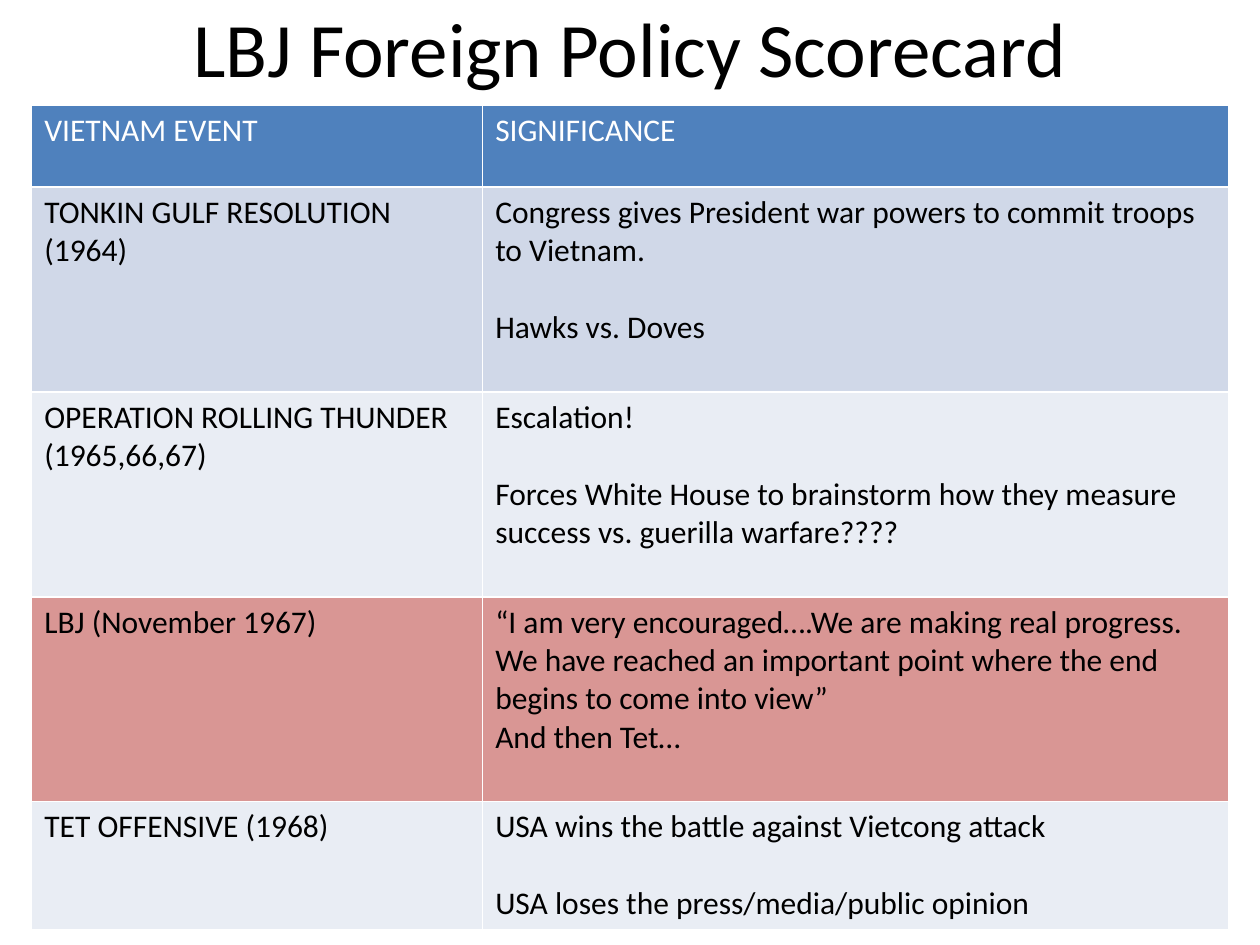
from pptx import Presentation
from pptx.dml.color import RGBColor
from pptx.enum.text import MSO_ANCHOR, PP_ALIGN
from pptx.oxml.ns import qn
from pptx.util import Cm, Pt
from lxml.etree import SubElement

WHITE = RGBColor(0xFF, 0xFF, 0xFF)
BLACK = RGBColor(0, 0, 0)
BLUE = RGBColor(0x4F, 0x81, 0xBD)
MIST = RGBColor(0xD0, 0xD8, 0xE8)
PALE = RGBColor(0xE9, 0xED, 0xF4)
ROSE = RGBColor(0xD9, 0x96, 0x94)
FONT = "Calibri"
GAP = Pt(22)

WIDTHS = (9.09, 15.04)
ROWS = (
    (1.65, BLUE, WHITE, 0, "VIETNAM EVENT", ["SIGNIFICANCE"]),
    (4.13, MIST, BLACK, GAP, "TONKIN GULF RESOLUTION (1964)",
     ["Congress gives President war powers to commit troops to Vietnam.",
      "Hawks vs. Doves"]),
    (4.13, PALE, BLACK, GAP, "OPERATION ROLLING THUNDER (1965,66,67)",
     ["Escalation!",
      "Forces White House to brainstorm how they measure success vs. "
      "guerilla warfare????"]),
    (4.13, ROSE, BLACK, 0, "LBJ (November 1967)",
     ["“I am very encouraged….We are making real progress. We have reached "
      "an important point where the end begins to come into view”",
      "And then Tet…"]),
    (2.58, PALE, BLACK, GAP, "TET OFFENSIVE (1968)",
     ["USA wins the battle against Vietcong attack",
      "USA loses the press/media/public opinion"]),
)


def add_run(para, text, size, ink):
    """Add one styled run to a paragraph."""
    run = para.add_run()
    run.text = text
    font = run.font
    font.name, font.size, font.bold = FONT, Pt(size), False
    font.color.rgb = ink


def add_title(slide, text):
    """Place and fill the title placeholder."""
    title = slide.shapes.title
    title.left, title.top = Cm(1.27), Cm(-0.64)
    title.width, title.height = Cm(22.86), Cm(3.18)
    frame = title.text_frame
    frame.vertical_anchor = MSO_ANCHOR.MIDDLE
    para = frame.paragraphs[0]
    para.alignment = PP_ALIGN.CENTER
    add_run(para, text, 44, BLACK)


def add_rules(cell):
    """Draw thin white rules round a cell."""
    props = cell._tc.get_or_add_tcPr()
    for side in "LRTB":
        line = SubElement(props, qn(f"a:ln{side}"), w=str(Pt(1)))
        fill = SubElement(line, qn("a:solidFill"))
        SubElement(fill, qn("a:srgbClr"), val=str(WHITE))


def fill_cell(cell, lines, fill, ink, gap):
    """Colour a cell and write its paragraphs."""
    add_rules(cell)
    cell.fill.solid()
    cell.fill.fore_color.rgb = fill
    frame = cell.text_frame
    for i, text in enumerate(lines):
        para = frame.add_paragraph() if i else frame.paragraphs[0]
        if i:
            para.space_before = gap
        add_run(para, text, 18, ink)


def add_score(slide):
    """Add the table of events and their significance."""
    high = sum(row[0] for row in ROWS)
    table = slide.shapes.add_table(
        len(ROWS), len(WIDTHS), Cm(0.64), Cm(2.12),
        Cm(sum(WIDTHS)), Cm(high)).table
    for col, width in zip(table.columns, WIDTHS):
        col.width = Cm(width)
    for row, (tall, fill, ink, gap, event, notes) in zip(table.rows, ROWS):
        row.height = Cm(tall)
        for cell, lines in zip(row.cells, ([event], notes)):
            fill_cell(cell, lines, fill, ink, gap)


def main():
    """Build the slide and save it."""
    deck = Presentation()
    deck.slide_width, deck.slide_height = Cm(25.4), Cm(19.05)
    slide = deck.slides.add_slide(deck.slide_layouts[5])
    add_title(slide, "LBJ Foreign Policy Scorecard")
    add_score(slide)
    deck.save("out.pptx")


if __name__ == "__main__":
    main()
